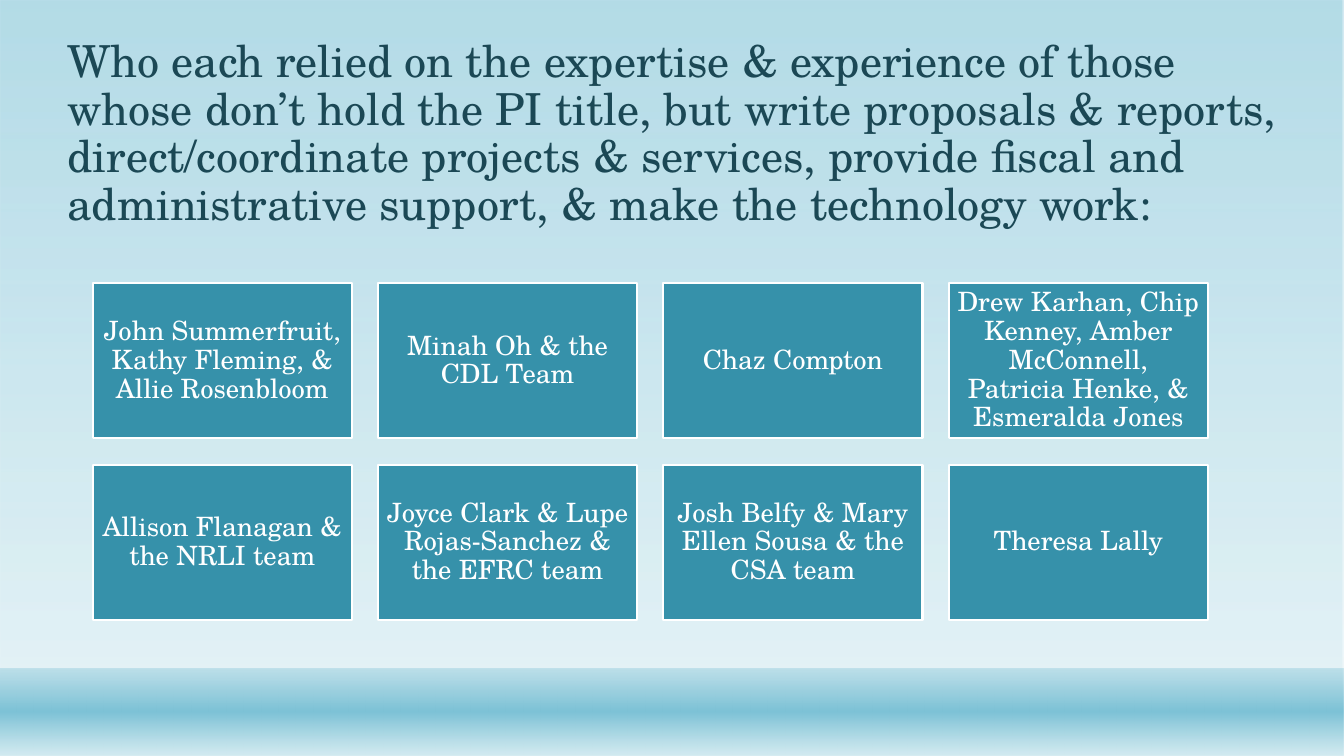
import dataclasses

import pptx
import pptx.dml.color
import pptx.enum.shapes
import pptx.enum.text
import pptx.oxml
import pptx.oxml.ns
import pptx.util
from pptx.util import Inches


@dataclasses.dataclass(frozen=True)
class Theme:
    font: str = "TeX Gyre Schola"
    title_size: float = 31.5
    card_size: float = 19
    title_color: str = "1B4855"
    card_fill: str = "3691AA"
    white: str = "FFFFFF"
    aqua: str = "7DC2D6"
    mist: str = "D4EBF1"


def rgb(value):
    return pptx.dml.color.RGBColor.from_string(value)


class SlideBuilder:
    def __init__(self, prs, theme):
        self.theme = theme
        self.s = prs.slides.add_slide(prs.slide_layouts[6])

    def rect(self, x, y, w, h):
        sp = self.s.shapes.add_shape(
            pptx.enum.shapes.MSO_SHAPE.RECTANGLE,
            Inches(x), Inches(y), Inches(w), Inches(h))
        sp.shadow.inherit = False
        return sp

    def gradient(self, x, y, w, h, stops):
        sp = self.rect(x, y, w, h)
        sp.line.fill.background()
        sp.fill.gradient()
        sp.fill.gradient_angle = 270
        stop_list = sp._element.spPr.find(".//" + pptx.oxml.ns.qn("a:gsLst"))
        for stop in list(stop_list):
            stop_list.remove(stop)
        for position, color, opacity in stops:
            stop_list.append(pptx.oxml.parse_xml(
                f'<a:gs {pptx.oxml.ns.nsdecls("a")} pos="{position * 1000}">'
                f'<a:srgbClr val="{color}"><a:alpha val="{opacity * 1000}"/>'
                f'</a:srgbClr></a:gs>'))

    def set_text(self, sp, text, size, color, align, anchor):
        tf = sp.text_frame
        tf.word_wrap = True
        tf.vertical_anchor = anchor
        p = tf.paragraphs[0]
        p.text = text
        p.alignment = align
        p.line_spacing = 0.9
        p.font.name = self.theme.font
        p.font.size = pptx.util.Pt(size)
        p.font.color.rgb = rgb(color)
        return tf

    def title(self, x, y, w, h, text):
        sp = self.s.shapes.add_textbox(Inches(x), Inches(y), Inches(w), Inches(h))
        self.set_text(sp, text, self.theme.title_size, self.theme.title_color,
                      pptx.enum.text.PP_ALIGN.LEFT,
                      pptx.enum.text.MSO_ANCHOR.BOTTOM)

    def card(self, x, y, w, h, text):
        sp = self.rect(x, y, w, h)
        sp.fill.solid()
        sp.fill.fore_color.rgb = rgb(self.theme.card_fill)
        sp.line.color.rgb = rgb(self.theme.white)
        sp.line.width = pptx.util.Pt(1.5)
        tf = self.set_text(sp, text, self.theme.card_size, self.theme.white,
                           pptx.enum.text.PP_ALIGN.CENTER,
                           pptx.enum.text.MSO_ANCHOR.MIDDLE)
        tf.margin_left = tf.margin_right = Inches(0.08)
        tf.margin_top = tf.margin_bottom = Inches(0.08)


TITLE = (
    "Who each relied on the expertise & experience of those whose don’t hold "
    "the PI title, but write proposals & reports, direct/coordinate projects & "
    "services, provide fiscal and administrative support, & make the technology work:"
)
TEAMS = [
    "John Summerfruit, Kathy Fleming, & Allie Rosenbloom",
    "Minah Oh & the CDL Team",
    "Chaz Compton",
    "Drew Karhan, Chip Kenney, Amber McConnell, Patricia Henke, & Esmeralda Jones",
    "Allison Flanagan & the NRLI team",
    "Joyce Clark & Lupe Rojas-Sanchez & the EFRC team",
    "Josh Belfy & Mary Ellen Sousa & the CSA team",
    "Theresa Lally",
]
COLUMNS = 4


def main():
    prs = pptx.Presentation()
    prs.slide_width = Inches(13.33)
    prs.slide_height = Inches(7.5)
    theme = Theme()
    slide = SlideBuilder(prs, theme)
    slide.gradient(0, 0, 13.33, 7.5, [(0, theme.aqua, 58), (88, theme.mist, 65)])
    slide.gradient(0, 6.63, 13.33, 0.87, [
        (1, theme.aqua, 38), (49, theme.aqua, 100), (100, theme.mist, 89)])
    slide.title(0.57, 0.36, 12.2, 1.97, TITLE)
    for i, team in enumerate(TEAMS):
        row, column = divmod(i, COLUMNS)
        slide.card(0.92 + column * 2.83, 2.81 + row * 1.8, 2.57, 1.54, team)
    prs.save("out.pptx")


if __name__ == "__main__":
    main()
